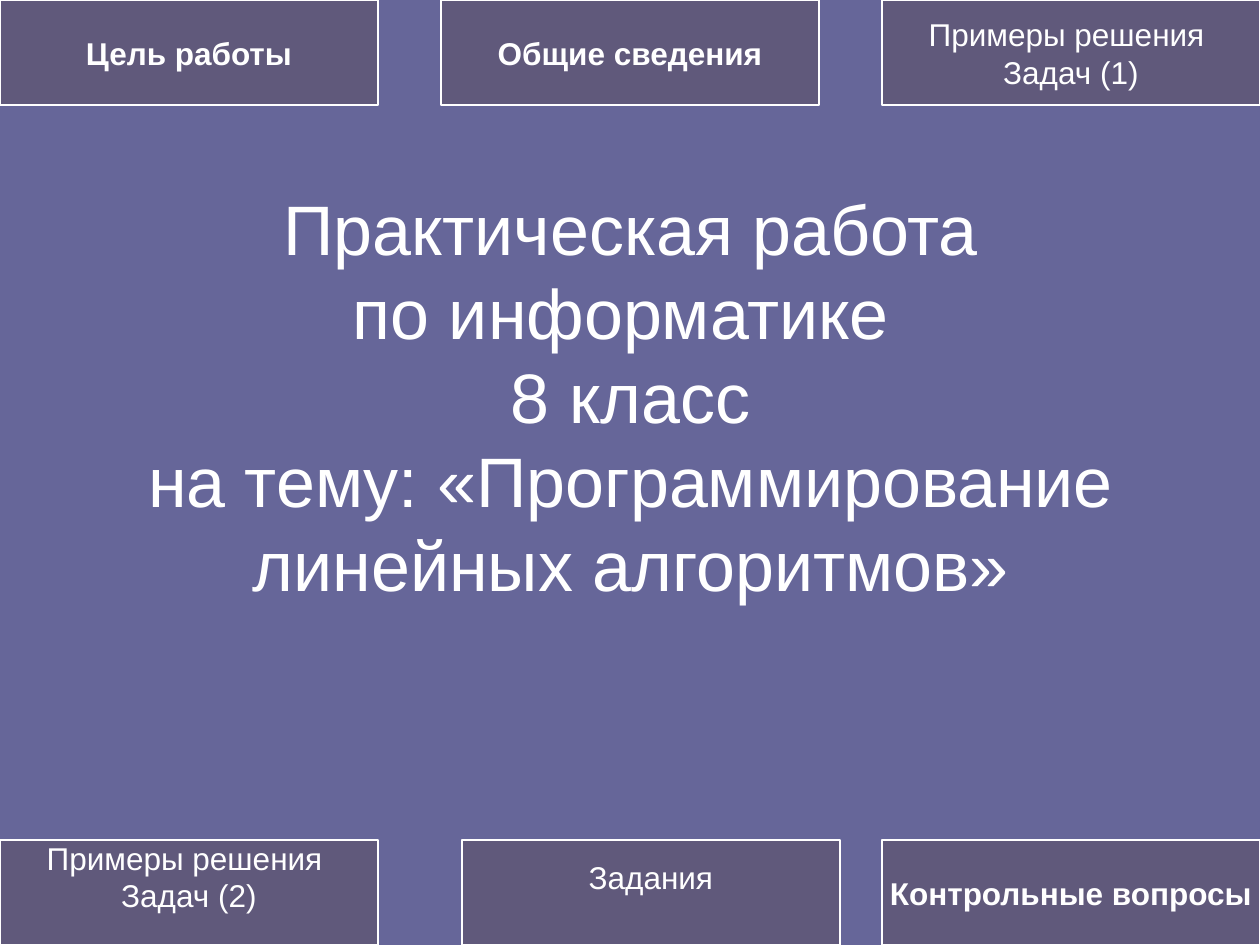
from dataclasses import dataclass

from pptx import Presentation
from pptx.dml.color import RGBColor
from pptx.enum.shapes import MSO_SHAPE
from pptx.enum.text import MSO_ANCHOR, MSO_AUTO_SIZE, PP_ALIGN
from pptx.util import Emu, Pt

PX_PER_INCH = 126
SLIDE_W, SLIDE_H = 1260, 945
BUTTON_W, BUTTON_H = 378, 105
BUTTON_STEP = (SLIDE_W - BUTTON_W) // 2
BOTTOM_Y = SLIDE_H - BUTTON_H
RAISED = 32  # bottom inset that lifts a label above the middle


@dataclass(frozen=True)
class Theme:
    background: str = "666699"
    button: str = "60597B"
    ink: str = "FFFFFF"
    font: str = "Arial"
    title_size: int = 40
    button_size: int = 18
    line_width: float = 0.75


def px(n):
    return Emu(round(n * 914400 / PX_PER_INCH))


def rgb(value):
    return RGBColor.from_string(value)


def write(tf, paragraphs, *, size, color, font, bold=False, wrap=True):
    """Fill a frame with centred paragraphs; a newline is a line break."""
    tf.word_wrap = wrap
    tf.auto_size = MSO_AUTO_SIZE.NONE
    tf.vertical_anchor = MSO_ANCHOR.MIDDLE
    for i, text in enumerate(paragraphs):
        p = tf.add_paragraph() if i else tf.paragraphs[0]
        p.alignment = PP_ALIGN.CENTER
        for j, line in enumerate(text.split("\n")):
            if j:
                p.add_line_break()
            r = p.add_run()
            r.text = line
            r.font.name = font
            r.font.size = Pt(size)
            r.font.bold = bold
            r.font.color.rgb = rgb(color)


class SlideBuilder:
    def __init__(self, prs, theme):
        self.theme = theme
        self.s = prs.slides.add_slide(prs.slide_layouts[5])
        fill = self.s.background.fill
        fill.solid()
        fill.fore_color.rgb = rgb(theme.background)

    def title(self, text, x, y, w, h):
        sp = self.s.shapes.title
        sp.left, sp.top, sp.width, sp.height = map(px, (x, y, w, h))
        write(sp.text_frame, [text], size=self.theme.title_size,
              color=self.theme.ink, font=self.theme.font)

    def button(self, lines, x, y, bold=False, raised=0):
        t = self.theme
        sp = self.s.shapes.add_shape(
            MSO_SHAPE.RECTANGLE, *map(px, (x, y, BUTTON_W, BUTTON_H)))
        sp.shadow.inherit = False
        sp.fill.solid()
        sp.fill.fore_color.rgb = rgb(t.button)
        sp.line.color.rgb = rgb(t.ink)
        sp.line.width = Pt(t.line_width)
        tf = sp.text_frame
        tf.margin_top, tf.margin_bottom = 0, px(raised)
        write(tf, lines, size=t.button_size, color=t.ink, font=t.font,
              bold=bold, wrap=False)


def main():
    prs = Presentation()
    prs.slide_width, prs.slide_height = px(SLIDE_W), px(SLIDE_H)
    slide = SlideBuilder(prs, Theme())
    slide.title("Практическая работа\nпо информатике \n8 класс\n"
                "на тему: «Программирование линейных алгоритмов»",
                95, 294, 1071, 203)

    slide.button(["Цель работы"], 0, 0, bold=True)
    slide.button(["Общие сведения"], BUTTON_STEP, 0, bold=True)
    slide.button(["Примеры решения ", "Задач (1)"], 2 * BUTTON_STEP, 0)
    slide.button(["Примеры решения ", "Задач (2)"], 0, BOTTOM_Y, raised=RAISED)
    slide.button(["Контрольные вопросы"], 2 * BUTTON_STEP, BOTTOM_Y, bold=True)
    slide.button(["Задания"], 462, BOTTOM_Y, raised=RAISED)
    prs.save("out.pptx")


if __name__ == "__main__":
    main()
